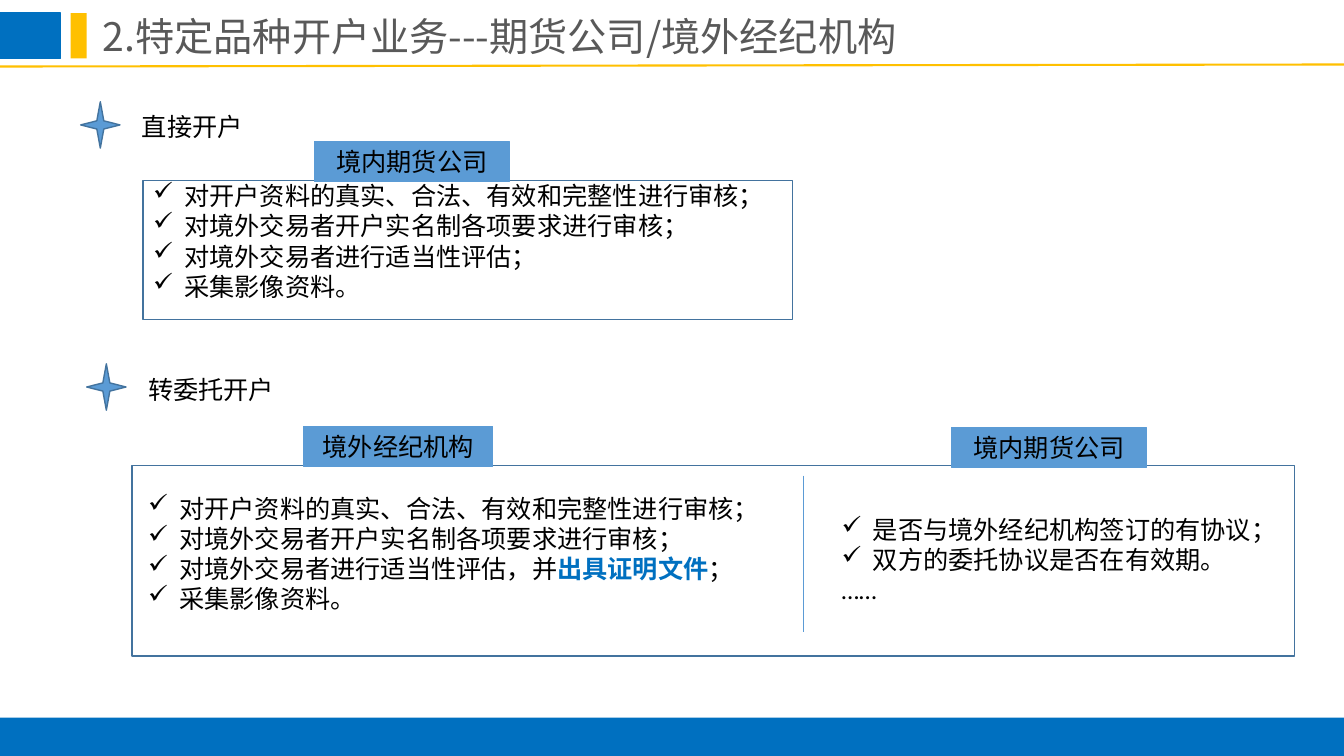
from lxml.etree import SubElement
from pptx import Presentation
from pptx.dml.color import RGBColor
from pptx.enum.lang import MSO_LANGUAGE_ID
from pptx.enum.shapes import MSO_CONNECTOR, MSO_SHAPE
from pptx.enum.text import MSO_ANCHOR, MSO_AUTO_SIZE, PP_ALIGN
from pptx.oxml.ns import qn
from pptx.util import Inches, Pt

BLUE, YELLOW, SKY, EDGE = "0070C0", "FFC000", "5B9BD5", "43739E"
WHITE, BLACK, GREY = "FFFFFF", "000000", "595959"
REVIEW = ["对开户资料的真实、合法、有效和完整性进行审核；",
          "对境外交易者开户实名制各项要求进行审核；"]


def rgb(value):
    return RGBColor.from_string(value)


def add_run(p, text, size=18, font="Calibri", color=BLACK, bold=False):
    r = p.add_run()
    r.text = text
    r.font.size, r.font.name, r.font.bold = Pt(size), font, bold
    r.font.color.rgb = rgb(color)
    r.font.language_id = MSO_LANGUAGE_ID.SIMPLIFIED_CHINESE
    SubElement(r.font._element, qn("a:ea"), typeface=font)


def add_box(s, kind, x, y, w, h, fill, line=None, weight=1):
    sp = s.shapes.add_shape(kind, Inches(x), Inches(y), Inches(w), Inches(h))
    sp.shadow.inherit = False
    sp.fill.solid()
    sp.fill.fore_color.rgb = rgb(fill)
    if line:
        sp.line.color.rgb = rgb(line)
        sp.line.width = Pt(weight)
    else:
        sp.line.fill.background()
    return sp


def add_line(s, x1, y1, x2, y2, color, weight):
    c = s.shapes.add_connector(MSO_CONNECTOR.STRAIGHT, Inches(x1), Inches(y1),
                               Inches(x2), Inches(y2))
    c.line.color.rgb = rgb(color)
    c.line.width = Pt(weight)
    SubElement(c._element.spPr, qn("a:effectLst"))


def add_text(s, x, y, w, h):
    tf = s.shapes.add_textbox(Inches(x), Inches(y), Inches(w), Inches(h)).text_frame
    tf.word_wrap = True
    return tf


def add_checklist(s, x, y, w, h, items, closing=None):
    """Each item is a string, or a list of (text, run format) pairs."""
    tf = add_text(s, x, y, w, h)
    for i, item in enumerate(items):
        p = tf.paragraphs[0] if i == 0 else tf.add_paragraph()
        pPr = p._p.get_or_add_pPr()
        pPr.set("marL", str(Inches(0.31)))
        pPr.set("indent", str(-Inches(0.31)))
        SubElement(pPr, qn("a:buChar"), char="✓")
        for text, style in [(item, {})] if isinstance(item, str) else item:
            add_run(p, text, **style)
    if closing:
        add_run(tf.add_paragraph(), closing)


def add_tag(s, x, y, w, text):
    sp = add_box(s, MSO_SHAPE.RECTANGLE, x, y, w, 0.4, SKY, SKY, 0.75)
    tf = sp.text_frame
    tf.vertical_anchor = MSO_ANCHOR.MIDDLE
    tf.paragraphs[0].alignment = PP_ALIGN.CENTER
    add_run(tf.paragraphs[0], text)


def add_heading(s, x, y, w, text):
    add_box(s, MSO_SHAPE.STAR_4_POINT, x, y, 0.39, 0.46, SKY, EDGE)
    add_run(add_text(s, x + 0.51, y + 0.05, w, 0.4).paragraphs[0], text)


def add_frame(s, title):
    # Title bar and footer band
    add_line(s, 0, 0.66, 13.33, 0.64, YELLOW, 1.5)
    add_box(s, MSO_SHAPE.RECTANGLE, 0, 0.13, 0.6, 0.45, BLUE, BLUE)
    add_box(s, MSO_SHAPE.RECTANGLE, 0.7, 0.13, 0.16, 0.45, YELLOW)
    add_box(s, MSO_SHAPE.RECTANGLE, 0, 7.12, 13.33, 0.38, BLUE)
    sp = s.shapes.title
    sp.left, sp.top, sp.width, sp.height = map(Inches, (0.92, 0.07, 10.36, 0.57))
    tf = sp.text_frame
    tf.auto_size = MSO_AUTO_SIZE.NONE
    tf.vertical_anchor = MSO_ANCHOR.TOP
    tf.paragraphs[0].alignment = PP_ALIGN.LEFT
    add_run(tf.paragraphs[0], title, 28, "Noto Sans CJK SC", GREY)


def add_direct(s, x, y, w, h):
    # Direct account opening
    add_heading(s, x - 0.62, y - 0.78, 4.26, "直接开户")
    add_box(s, MSO_SHAPE.RECTANGLE, x, y, w, h, WHITE, EDGE)
    add_checklist(s, x, y - 0.05, 7.03, 1.31,
                  REVIEW + ["对境外交易者进行适当性评估；", "采集影像资料。"])
    add_tag(s, x + 1.7, y - 0.39, 1.93, "境内期货公司")


def add_delegated(s, x, y, w, h):
    # Delegated account opening: overseas broker left, domestic company right
    add_heading(s, x - 0.45, y - 1.01, 1.75, "转委托开户")
    add_box(s, MSO_SHAPE.RECTANGLE, x, y, w, h, WHITE, EDGE)
    add_line(s, x + 6.66, y + 0.1, x + 6.66, y + 1.65, SKY, 0.5)
    proof = [("对境外交易者进行适当性评估，并", {}),
             ("出具证明文件", {"color": BLUE, "bold": True}), ("；", {})]
    add_checklist(s, x + 0.06, y + 0.22, 7.03, 1.31,
                  REVIEW + [proof, "采集影像资料。"])
    add_checklist(s, x + 6.94, y + 0.43, 4.3, 1.01,
                  ["是否与境外经纪机构签订的有协议；", "双方的委托协议是否在有效期。"], "……")
    add_tag(s, x + 1.7, y - 0.39, 1.88, "境外经纪机构")
    add_tag(s, x + 8.13, y - 0.38, 1.93, "境内期货公司")


def main():
    prs = Presentation()
    prs.slide_width, prs.slide_height = Inches(13.33), Inches(7.5)
    s = prs.slides.add_slide(prs.slide_layouts[5])
    add_frame(s, "2.特定品种开户业务---期货公司/境外经纪机构")
    add_direct(s, 1.42, 1.79, 6.44, 1.38)
    add_delegated(s, 1.31, 4.62, 11.53, 1.89)
    prs.save("out.pptx")


if __name__ == "__main__":
    main()
